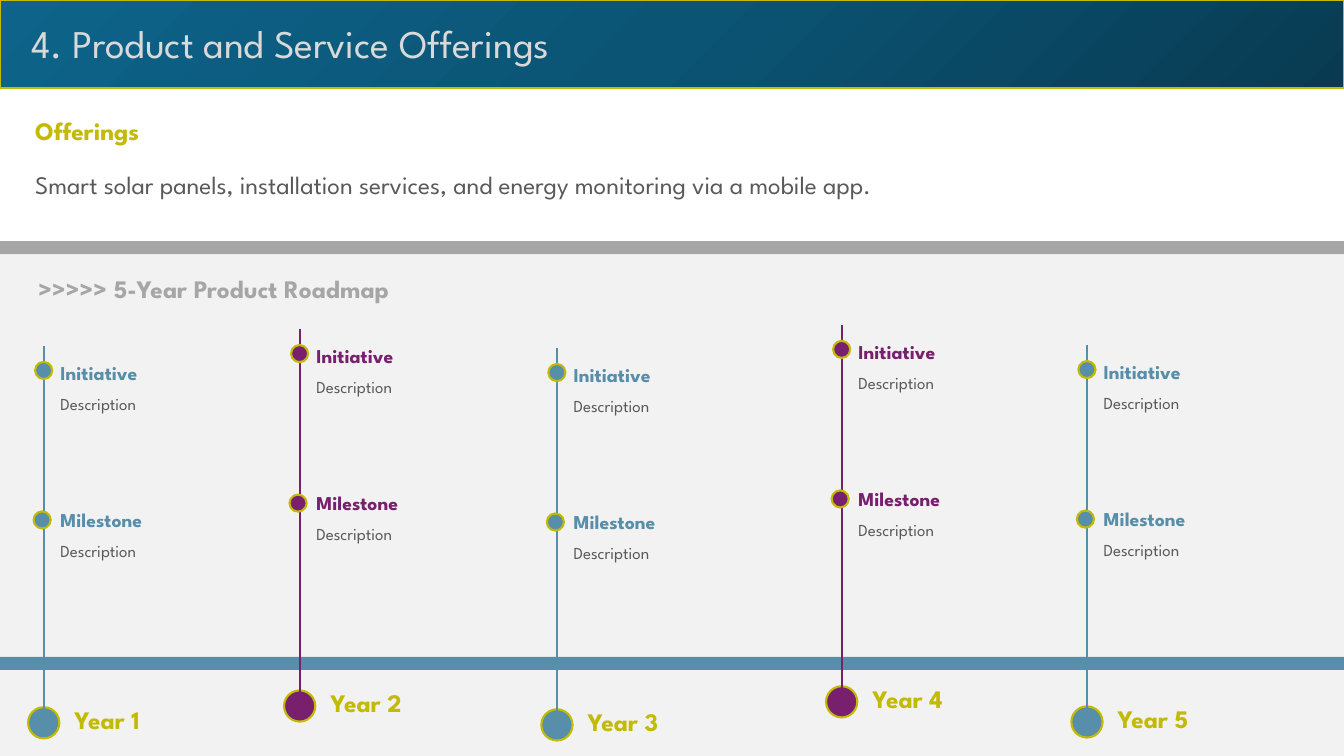
from copy import deepcopy

from pptx import Presentation
from pptx.dml.color import RGBColor
from pptx.enum.shapes import MSO_CONNECTOR, MSO_SHAPE
from pptx.enum.text import MSO_AUTO_SIZE
from pptx.oxml.ns import qn
from pptx.util import Inches, Pt

RECT, OVAL = MSO_SHAPE.RECTANGLE, MSO_SHAPE.OVAL
LINE = MSO_CONNECTOR.STRAIGHT
GROW = MSO_AUTO_SIZE.SHAPE_TO_FIT_TEXT

GOLD = RGBColor(0xC3, 0xBA, 0x05)
BLUE = RGBColor(0x57, 0x8E, 0xA9)
PLUM = RGBColor(0x78, 0x20, 0x6E)
GRAY = RGBColor(0xA6, 0xA6, 0xA6)
DARK = RGBColor(0x59, 0x59, 0x59)
PALE = RGBColor(0xF2, 0xF2, 0xF2)
SILVER = RGBColor(0xD9, 0xD9, 0xD9)
NAVY = RGBColor(0x08, 0x3B, 0x52)
TEAL = RGBColor(0x0B, 0x54, 0x74)
AZURE = RGBColor(0x0D, 0x63, 0x8A)

deck = Presentation()
deck.slide_width, deck.slide_height = Inches(13.33), Inches(7.5)
COL, ROW = deck.slide_width / 160, deck.slide_height / 90
slide = deck.slides.add_slide(deck.slide_layouts[6])

HEAD = {"size": Pt(28), "color": SILVER, "bold": False}
BODY = {"size": Pt(18), "color": DARK, "bold": False}
NOTE = {"size": Pt(12), "color": DARK, "bold": False}
LABEL = {"size": Pt(18), "color": GOLD, "bold": True}
ROAD = {"size": Pt(18), "color": GRAY, "bold": True}


def shape(home, kind, x, y, w, h, fill, edge=None):
    item = home.add_shape(kind, int(x * COL), int(y * ROW), int(w * COL), int(h * ROW))
    item.shadow.inherit = False
    item.fill.solid()
    item.fill.fore_color.rgb = fill
    if edge is None:
        item.line.fill.background()
    else:
        item.line.color.rgb = edge
        item.line.width = Pt(1.5)
    return item


def text(words, x, y, w, h, style):
    box = slide.shapes.add_textbox(int(x * COL), int(y * ROW), int(w * COL), int(h * ROW))
    frame = box.text_frame
    frame.word_wrap = True
    frame.auto_size = GROW
    run = frame.paragraphs[0].add_run()
    run.text = words
    run.font.name = "League Spartan"
    for key, value in style.items():
        if key == "color":
            run.font.color.rgb = value
        else:
            setattr(run.font, key, value)


shape(slide.shapes, RECT, 0, 29.4, 160, 60.6, PALE)
text(">>>>> 5-Year Product Roadmap", 3.4, 32, 83.4, 4.8, ROAD)

bar = shape(slide.shapes, RECT, 0, 0, 160, 10.5, TEAL, GOLD)
bar.fill.gradient()
bar.fill.gradient_angle = 135
stops = bar._element.spPr.find(qn("a:gradFill")).find(qn("a:gsLst"))
stops.append(deepcopy(stops[0]))
for stop, spot, tint in zip(bar.fill.gradient_stops, (0, 0.5, 1), (NAVY, TEAL, AZURE)):
    stop.position = spot
    stop.color.rgb = tint

text("4. Product and Service Offerings", 2.6, 1.7, 97, 6.8, HEAD)
text("Offerings", 3, 13.1, 48, 4.8, LABEL)
text("Smart solar panels, installation services, and energy monitoring via a mobile app.",
     3, 19.6, 154.8, 4.8, BODY)
for y, tint in ((28.7, GRAY), (78.2, BLUE)):
    shape(slide.shapes, RECT, 0, y, 160, 1.55, tint)

YEARS = (
    (5.2, 41.15, 25.2, BLUE),
    (35.67, 39.15, 24.4, PLUM),
    (66.3, 41.4, 25.2, BLUE),
    (100.2, 38.65, 21.7, PLUM),
    (129.4, 41.05, 28.4, BLUE),
)
STEM = 44.9
DOTS = ((0, 2.95, 2.04), (-0.18, 20.75, 2.04))

for year, (x, top, wide, tint) in enumerate(YEARS, 1):
    text(f"Year {year}", x + 2.5, top + 42.1, 14.4, 4.8, LABEL)
    bold = {"size": Pt(14), "color": tint, "bold": True}
    for step, name in enumerate(("Initiative", "Milestone")):
        y = top + 1.2 + step * 17.5
        text(name, x + 0.8, y, 14.4, 4.1, bold)
        text("Description", x + 0.8, y + 3.9, wide, 3.6, NOTE)

    mark = slide.shapes.add_group_shape().shapes
    for n, (dx, dy, size) in enumerate(((0, STEM, 3.72), *DOTS)):
        shape(mark, OVAL, x + dx - size / 2, top + dy - size / 2, size, size, tint, GOLD)
        if n == 0:
            stem = mark.add_connector(LINE, int(x * COL), int((top + STEM) * ROW),
                                      int(x * COL), int(top * ROW))
            stem.line.color.rgb = tint
            stem.line.width = Pt(1.5)
            props = stem._element.spPr
            props.append(props.makeelement(qn("a:effectLst"), {}))

deck.save("out.pptx")
